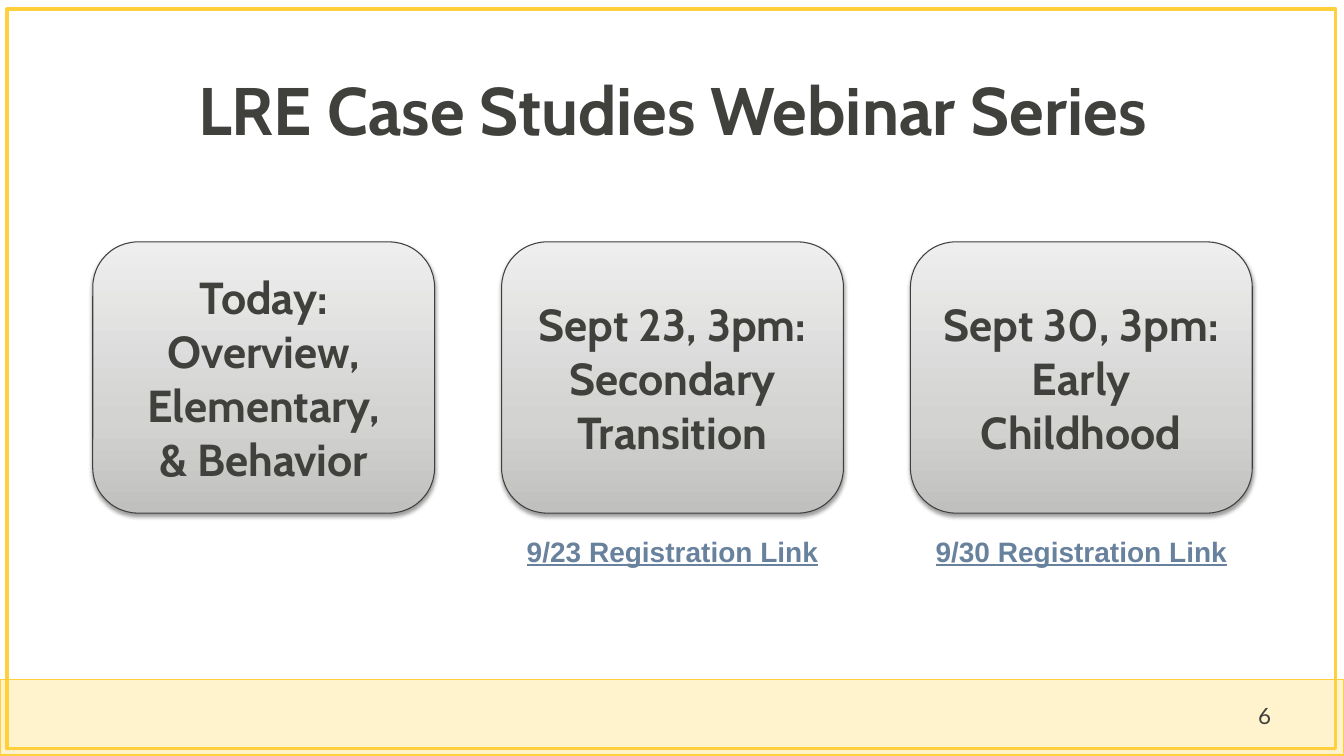
from lxml import etree
from pptx import Presentation
from pptx.dml.color import RGBColor
from pptx.enum.shapes import MSO_SHAPE
from pptx.enum.text import MSO_ANCHOR, PP_ALIGN
from pptx.oxml import parse_xml
from pptx.oxml.ns import qn
from pptx.util import Inches, Pt

RECTANGLE, ROUNDED = MSO_SHAPE.RECTANGLE, MSO_SHAPE.ROUNDED_RECTANGLE
LEFT, CENTER = PP_ALIGN.LEFT, PP_ALIGN.CENTER
TOP, MIDDLE = MSO_ANCHOR.TOP, MSO_ANCHOR.MIDDLE
DRAWING = "http://schemas.openxmlformats.org/drawingml/2006/main"

COLORS = {
    "text": "40403D",
    "link": "68829E",
    "gold": "FFCF3C",
    "band": "FFF3CD",
    "outline": "3F3F3C",
    "shadow": "000000",
}
CARD_GRADIENT = [(0, "C0C0BF"), (35, "D3D3D2"), (100, "EEEEEE")]


def color(name):
    return RGBColor.from_string(COLORS[name])


def write_text(shape, text, size=32, font="Cabin", ink="text", bold=True,
               underline=False, align=CENTER, anchor=MIDDLE, spacing=1.0):
    """Fill a shape with text, one paragraph per line."""
    frame = shape.text_frame
    frame.word_wrap = True
    frame.vertical_anchor = anchor
    frame.text = text
    for paragraph in frame.paragraphs:
        paragraph.alignment = align
        paragraph.line_spacing = spacing
        for run in paragraph.runs:
            run.font.name = font
            run.font.size = Pt(size)
            run.font.bold = bold
            run.font.underline = underline
            run.font.color.rgb = color(ink)


class SlideBuilder:
    def __init__(self, slide):
        self.slide = slide

    def box(self, kind, left, top, width, height, line, weight, fill=None):
        shape = self.slide.shapes.add_shape(
            kind, Inches(left), Inches(top), Inches(width), Inches(height))
        shape.shadow.inherit = False
        if fill:
            shape.fill.solid()
            shape.fill.fore_color.rgb = color(fill)
        else:
            shape.fill.background()
        shape.line.color.rgb = color(line)
        shape.line.width = Pt(weight)
        return shape

    def label(self, text, left, top, width, height, **style):
        shape = self.slide.shapes.add_textbox(
            Inches(left), Inches(top), Inches(width), Inches(height))
        write_text(shape, text, **style)

    def card(self, text, left, top, width, height):
        shape = self.box(ROUNDED, left, top, width, height, "outline", 0.75)
        # Vertical gradient, dark at the bottom
        shape.fill.gradient()
        shape.fill.gradient_angle = 90
        properties = shape._element.spPr
        stops = properties.find(".//" + qn("a:gsLst"))
        for stop in list(stops):
            stops.remove(stop)
        for position, value in CARD_GRADIENT:
            stop = etree.SubElement(stops, qn("a:gs"), pos=str(position * 1000))
            etree.SubElement(stop, qn("a:srgbClr"), val=value)
        # Soft shadow below the card
        properties.find(qn("a:effectLst")).append(parse_xml(
            f'<a:outerShdw xmlns:a="{DRAWING}" blurRad="{Pt(3.1)}" '
            f'dist="{Pt(1.6)}" dir="5400000" rotWithShape="0">'
            f'<a:srgbClr val="{COLORS["shadow"]}"><a:alpha val="38000"/>'
            '</a:srgbClr></a:outerShdw>'))
        write_text(shape, text)


def main():
    presentation = Presentation()
    presentation.slide_width = Inches(13.33)
    presentation.slide_height = Inches(7.5)
    builder = SlideBuilder(
        presentation.slides.add_slide(presentation.slide_layouts[6]))

    # Footer band and frame
    builder.box(RECTANGLE, 0, 6.74, 13.33, 0.75, "gold", 1, fill="band")
    builder.box(RECTANGLE, 0.07, 0.09, 13.18, 7.34, "gold", 2.25)

    # Title and page number
    builder.label("LRE Case Studies Webinar Series", 0.92, 0.4, 11.5, 1.45,
                  size=48, spacing=0.9)
    builder.label("6", 12.38, 6.9, 0.7, 0.4, size=16, font="Lato",
                  bold=False, align=LEFT)

    # Webinar cards with their registration links
    webinars = [
        ("Today:\nOverview, Elementary,\n& Behavior", None),
        ("Sept 23, 3pm:\nSecondary Transition", "9/23 Registration Link"),
        ("Sept 30, 3pm:\nEarly Childhood", "9/30 Registration Link"),
    ]
    card_width, card_step = 3.39, 4.055
    for index, (text, link) in enumerate(webinars):
        left = 0.92 + index * card_step
        builder.card(text, left, 2.4, card_width, 2.69)
        if link:
            builder.label(link, left, 5.25, card_width, 0.44, size=20,
                          font="Arial", ink="link", underline=True, anchor=TOP)

    presentation.save("out.pptx")


if __name__ == "__main__":
    main()
